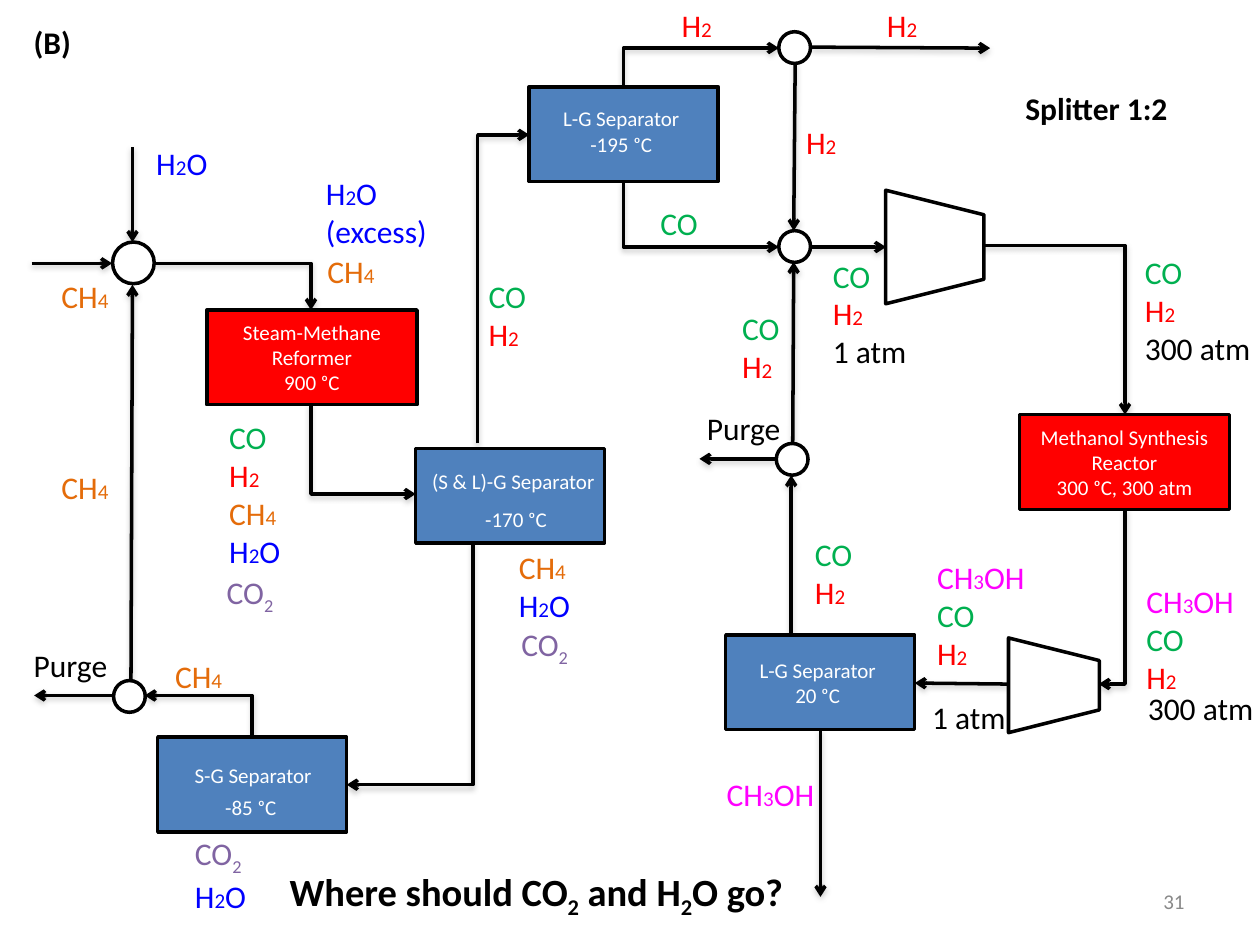
from itertools import groupby

from lxml import etree
from pptx import Presentation
from pptx import util as u
from pptx.dml.color import RGBColor
from pptx.enum import shapes, text
from pptx.oxml import ns

BLACK = RGBColor(0x00, 0x00, 0x00)
WHITE = RGBColor(0xFF, 0xFF, 0xFF)
GRAY = RGBColor(0x89, 0x89, 0x89)
RED = RGBColor(0xFF, 0x00, 0x00)
STEEL = RGBColor(0x4F, 0x81, 0xBD)
BLUE = RGBColor(0x00, 0x00, 0xFF)
ORANGE = RGBColor(0xE4, 0x6C, 0x0A)
GREEN = RGBColor(0x00, 0xB0, 0x50)
MAGENTA = RGBColor(0xFF, 0x00, 0xFF)
PURPLE = RGBColor(0x80, 0x64, 0xA2)

QUESTION = "Where should CO2 and H2O go?"
FORMULA_COLORS = {
    "H2O": BLUE, "H2O (excess)": BLUE, "CH4": ORANGE, "CO": GREEN, "H2": RED,
    "CH3OH": MAGENTA, "CO2": PURPLE, QUESTION: BLACK,
}
LEFT, CENTER, RIGHT = text.PP_ALIGN.LEFT, text.PP_ALIGN.CENTER, text.PP_ALIGN.RIGHT

presentation = Presentation()
presentation.slide_width = u.Cm(25.4)
presentation.slide_height = u.Cm(19.05)
slide = presentation.slides.add_slide(presentation.slide_layouts[6])


def write_lines(frame, lines, size=18, color=BLACK, bold=False, align=LEFT):
    frame.word_wrap = True
    for index, line in enumerate(lines):
        paragraph = frame.paragraphs[0] if index == 0 else frame.add_paragraph()
        paragraph.alignment = align
        if line in FORMULA_COLORS:
            pieces = [(digit, "".join(group)) for digit, group in groupby(line, str.isdigit)]
        else:
            pieces = [(False, line)]
        for is_digit, piece in pieces:
            run = paragraph.add_run()
            run.text = piece
            run.font.name = "Calibri"
            run.font.bold = bold
            run.font.size = u.Pt(size)
            run.font.color.rgb = FORMULA_COLORS.get(line, color)
            if is_digit and "CO2" in line:
                run.font._element.set("baseline", "-25000")
            elif is_digit:
                run.font.size = u.Pt(12)


def add_label(left, top, width, height, lines, **style):
    box = slide.shapes.add_textbox(u.Cm(left), u.Cm(top), u.Cm(width), u.Cm(height))
    write_lines(box.text_frame, lines, **style)
    return box


streams = [
    ("straight", 2.67, 2.97, 2.67, 4.88),
    ("straight", 0.64, 5.31, 2.26, 5.31),
    ("across", 3.1, 5.31, 6.27, 6.25),
    ("upright", 6.27, 8.15, 8.38, 9.96),
    ("across", 18.34, 4.95, 22.68, 8.36),
    ("upright", 22.68, 10.26, 22.15, 13.79),
    ("straight", 15.98, 8.99, 16, 5.28),
    ("upright", 9.63, 8.94, 10.67, 2.72),
    ("straight", 20.32, 13.79, 18.44, 13.77),
    ("straight", 15.95, 12.85, 15.95, 9.58),
    ("straight", 15.65, 9.25, 14.1, 9.25),
    ("straight", 2.64, 13.72, 2.67, 5.74),
    ("straight", 2.29, 14.02, 0.69, 14.02),
    ("upright", 12.57, 1.75, 15.7, 0.97),
    ("straight", 16.31, 4.98, 17.86, 4.98),
    ("straight", 16.36, 0.95, 19.96, 0.97),
    ("straight", 16.03, 1.27, 16, 4.65),
    ("upright", 12.57, 3.66, 15.7, 4.98),
    ("upright", 9.53, 10.95, 6.99, 15.82),
    ("upright", 5.08, 14.86, 2.92, 14.02),
    ("straight", 16.54, 14.71, 16.54, 18.08),
]
for route, x1, y1, x2, y2 in streams:
    kind = shapes.MSO_CONNECTOR.STRAIGHT if route == "straight" else shapes.MSO_CONNECTOR.ELBOW
    if route == "upright":
        middle_x, middle_y = (x1 + x2) / 2, (y1 + y2) / 2
        half_x, half_y = (x2 - x1) / 2, (y2 - y1) / 2
        x1, x2 = middle_x - half_y, middle_x + half_y
        y1, y2 = middle_y + half_x, middle_y - half_x
    connector = slide.shapes.add_connector(kind, u.Cm(x1), u.Cm(y1), u.Cm(x2), u.Cm(y2))
    connector.line.color.rgb = BLACK
    connector.line.width = u.Pt(2)
    properties = connector._element.spPr
    if route != "straight":
        properties.find(ns.qn("a:prstGeom")).set("prst", "bentConnector2")
    if route == "upright":
        properties.find(ns.qn("a:xfrm")).set("rot", "5400000")
    etree.SubElement(properties.find(ns.qn("a:ln")), ns.qn("a:tailEnd"), type="arrow")
    effects = etree.SubElement(properties, ns.qn("a:effectLst"))
    shadow = etree.SubElement(effects, ns.qn("a:outerShdw"), blurRad=str(u.Pt(3.1)),
                              dist=str(u.Pt(1.6)), dir="5400000", rotWithShape="0")
    shadow_color = etree.SubElement(shadow, ns.qn("a:srgbClr"), val="808080")
    etree.SubElement(shadow_color, ns.qn("a:alpha"), val="38000")

RECTANGLE = shapes.MSO_SHAPE.RECTANGLE
TRAPEZOID = shapes.MSO_SHAPE.TRAPEZOID
OVAL = shapes.MSO_SHAPE.OVAL
MIXER = shapes.MSO_SHAPE.FLOWCHART_CONNECTOR
units = [
    (RECTANGLE, 4.17, 6.25, 4.24, 1.91, RED, ["Steam-Methane Reformer", "900 ᵒC"]),
    (RECTANGLE, 20.55, 8.36, 4.24, 1.91, RED, ["Methanol Synthesis Reactor", "300 ᵒC, 300 atm"]),
    (RECTANGLE, 14.63, 12.8, 3.81, 1.91, STEEL, []),
    (RECTANGLE, 8.38, 9.04, 3.81, 1.91, STEEL, []),
    (RECTANGLE, 10.67, 1.75, 3.81, 1.91, STEEL, []),
    (RECTANGLE, 3.18, 14.86, 3.81, 1.91, STEEL, []),
    (TRAPEZOID, 17.7, 3.99, 2.29, 1.98, WHITE, []),
    (TRAPEZOID, 20.29, 12.9, 1.91, 1.83, WHITE, []),
    (OVAL, 15.7, 4.65, 0.64, 0.64, WHITE, []),
    (OVAL, 15.65, 8.94, 0.64, 0.64, WHITE, []),
    (OVAL, 2.29, 13.72, 0.64, 0.64, WHITE, []),
    (OVAL, 15.7, 0.64, 0.64, 0.64, WHITE, []),
    (MIXER, 2.27, 4.88, 0.84, 0.84, WHITE, []),
]
for preset, left, top, width, height, fill, lines in units:
    shape = slide.shapes.add_shape(preset, u.Cm(left), u.Cm(top), u.Cm(width), u.Cm(height))
    shape.shadow.inherit = False
    shape.fill.solid()
    shape.fill.fore_color.rgb = fill
    shape.line.color.rgb = BLACK
    shape.line.width = u.Pt(2)
    if preset == TRAPEZOID:
        shape.rotation = 90
    if lines:
        shape.text_frame.vertical_anchor = text.MSO_ANCHOR.MIDDLE
        write_lines(shape.text_frame, lines, size=12, color=WHITE, align=CENTER)

separator_labels = [
    (8.46, 9.32, 3.81, 0.76, ["(S & L)-G Separator"], LEFT),
    (9.53, 10.08, 2.01, 0.76, ["-170 ᵒC"], LEFT),
    (14.58, 13.13, 3.81, 1.3, ["L-G Separator", "20 ᵒC"], CENTER),
    (10.62, 2.01, 3.81, 1.27, ["L-G Separator", "-195 ᵒC"], CENTER),
    (3.2, 15.24, 3.81, 0.76, ["S-G Separator"], CENTER),
    (4.29, 15.9, 2.01, 0.76, ["-85 ᵒC"], LEFT),
]
for left, top, width, height, lines, align in separator_labels:
    add_label(left, top, width, height, lines, size=12, color=WHITE, align=align)

stream_labels = [
    (2.9, 2.77, 2.11, 1.02, ["H2O"]),
    (0.99, 5.46, 2.11, 1.02, ["CH4"]),
    (6.32, 3.38, 2.59, 1.8, ["H2O (excess)"]),
    (6.35, 4.95, 2.01, 1.8, ["CH4"]),
    (4.37, 8.31, 1.91, 3.33, ["CO", "H2", "CH4", "H2O"]),
    (4.32, 11.43, 1.91, 1.02, ["CO2"]),
    (16.54, 5.05, 2.34, 2.57, ["CO", "H2", "1 atm"]),
    (22.86, 11.61, 2.54, 2.57, ["CH3OH", "CO", "H2"]),
    (22.89, 13.77, 2.87, 1.02, ["300 atm"]),
    (22.83, 4.98, 2.79, 2.57, ["CO", "H2", "300 atm"]),
    (18.64, 11.13, 2.54, 2.57, ["CH3OH", "CO", "H2"]),
    (18.54, 13.94, 2.87, 1.02, ["1 atm"]),
    (16.18, 10.67, 1.47, 1.78, ["CO", "H2"]),
    (14.4, 15.49, 2.74, 1.02, ["CH3OH"]),
    (14, 8.13, 2.87, 1.02, ["Purge"]),
    (0.43, 12.9, 2.87, 1.02, ["Purge"]),
    (13.49, 0, 1.27, 1.02, ["H2"]),
    (17.63, 0, 1.27, 1.02, ["H2"]),
    (16, 2.36, 1.27, 1.02, ["H2"]),
    (9.6, 5.46, 2.34, 1.8, ["CO", "H2"]),
    (3.28, 13.13, 2.11, 1.02, ["CH4"]),
    (3.68, 16.69, 1.91, 2.57, ["CO2", "H2O"]),
    (10.21, 10.92, 1.91, 1.8, ["CH4", "H2O"]),
    (10.26, 12.47, 1.91, 1.02, ["CO2"]),
    (0.99, 9.32, 2.11, 1.02, ["CH4"]),
    (14.71, 6.1, 1.47, 1.78, ["CO", "H2"]),
]
for label in stream_labels:
    add_label(*label)

add_label(12.52, 3.99, 2.34, 1.02, ["CO"], align=CENTER)
add_label(0.43, 0.33, 1.47, 1.02, ["(B)"], bold=True)
add_label(20.42, 1.68, 4.37, 1.02, ["Splitter 1:2"], bold=True)
add_label(5.59, 17.37, 14.4, 1.19, [QUESTION], size=22, bold=True)
page_number = add_label(18.21, 17.65, 5.92, 1.02, ["31"], size=12, color=GRAY, align=RIGHT)
page_number.text_frame.vertical_anchor = text.MSO_ANCHOR.MIDDLE

presentation.save("out.pptx")
